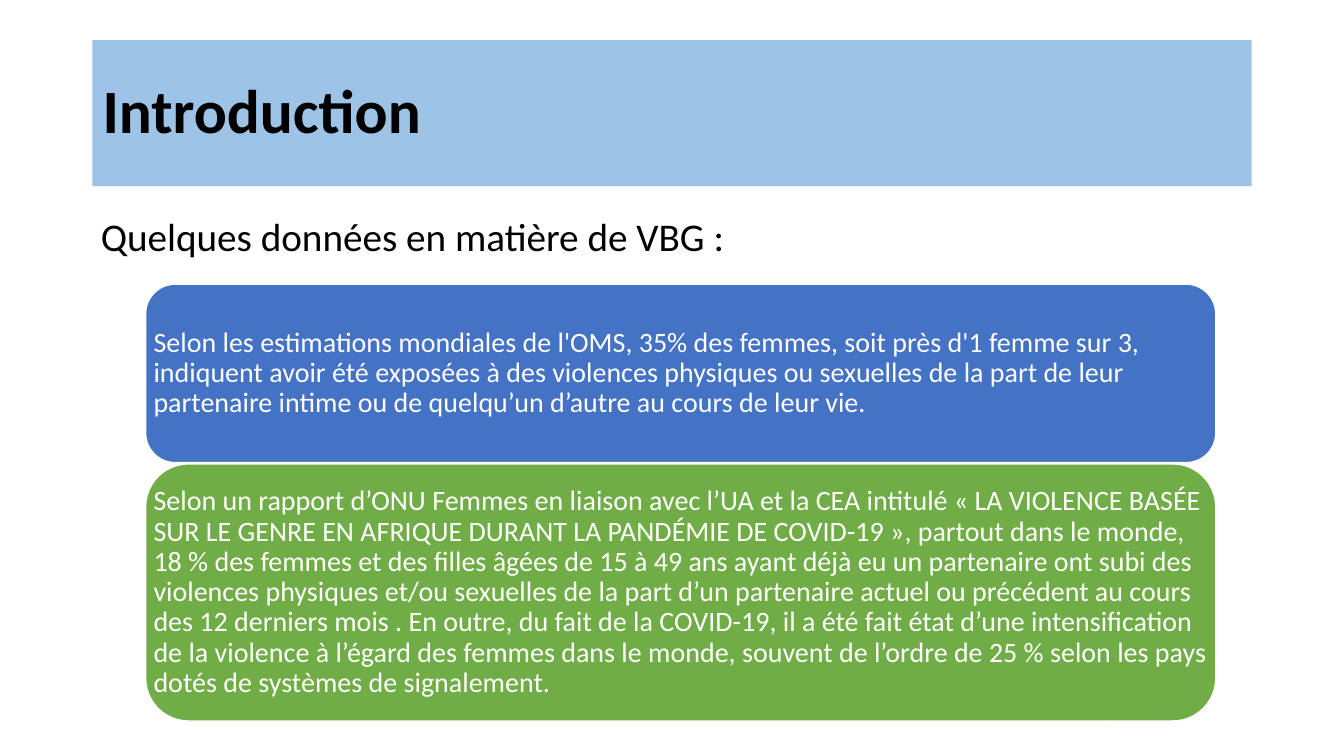
from pptx import Presentation
from pptx.dml.color import RGBColor
from pptx.enum.shapes import MSO_SHAPE
from pptx.enum.text import MSO_ANCHOR, PP_ALIGN
from pptx.util import Cm, Pt


def paint(color_format, hex_color):
    color_format.rgb = RGBColor.from_string(hex_color)


def write(frame, text, size, hex_color, anchor, bold=False):
    frame.word_wrap = True
    frame.vertical_anchor = anchor
    paragraph = frame.paragraphs[0]
    paragraph.alignment = PP_ALIGN.LEFT
    paragraph.line_spacing = 0.9
    run = paragraph.add_run()
    run.text = text
    run.font.name = "Calibri"
    run.font.size = Pt(size)
    run.font.bold = bold
    paint(run.font.color, hex_color)


presentation = Presentation()
presentation.slide_width = Cm(33.87)
presentation.slide_height = Cm(19.05)
slide = presentation.slides.add_slide(presentation.slide_layouts[5])

# Title band
title = slide.shapes.title
title.left, title.top, title.width, title.height = Cm(2.33), Cm(1.01), Cm(29.21), Cm(3.68)
title.fill.solid()
paint(title.fill.fore_color, "9DC3E6")
write(title.text_frame, "Introduction", 44, "000000", MSO_ANCHOR.MIDDLE, bold=True)

# Lead-in sentence
lead = slide.shapes.add_textbox(Cm(2.29), Cm(5.36), Cm(29.21), Cm(12.09))
lead.fill.solid()
paint(lead.fill.fore_color, "FFFFFF")
write(lead.text_frame, "Quelques données en matière de VBG :", 28, "000000", MSO_ANCHOR.TOP)

# Key figures: top, height, colour, wording
findings = [
    (7.16, 4.5, "4472C4",
     "Selon les estimations mondiales de l'OMS, 35% des femmes, soit près d'1 femme sur 3, "
     "indiquent avoir été exposées à des violences physiques ou sexuelles de la part de leur "
     "partenaire intime ou de quelqu’un d’autre au cours de leur vie."),
    (11.69, 6.48, "70AD47",
     "Selon un rapport d’ONU Femmes en liaison avec l’UA et la CEA intitulé « LA VIOLENCE BASÉE "
     "SUR LE GENRE EN AFRIQUE DURANT LA PANDÉMIE DE COVID-19 », partout dans le monde, 18 % des "
     "femmes et des filles âgées de 15 à 49 ans ayant déjà eu un partenaire ont subi des "
     "violences physiques et/ou sexuelles de la part d’un partenaire actuel ou précédent au "
     "cours des 12 derniers mois . En outre, du fait de la COVID-19, il a été fait état d’une "
     "intensification de la violence à l’égard des femmes dans le monde, souvent de l’ordre de "
     "25 % selon les pays dotés de systèmes de signalement."),
]
for top, height, color, wording in findings:
    area = Cm(3.67), Cm(top), Cm(26.97), Cm(height)
    panel = slide.shapes.add_shape(MSO_SHAPE.ROUNDED_RECTANGLE, *area)
    panel.shadow.inherit = False
    panel.fill.solid()
    paint(panel.fill.fore_color, color)
    paint(panel.line.color, "FFFFFF")
    panel.line.width = Pt(1)

    # Separate text area, so the rounded corners do not narrow the lines
    statement = slide.shapes.add_textbox(*area).text_frame
    statement.margin_left = statement.margin_right = Cm(0.2)
    statement.margin_top = statement.margin_bottom = Cm(0.2)
    write(statement, wording, 20, "FFFFFF", MSO_ANCHOR.MIDDLE)

presentation.save("out.pptx")
